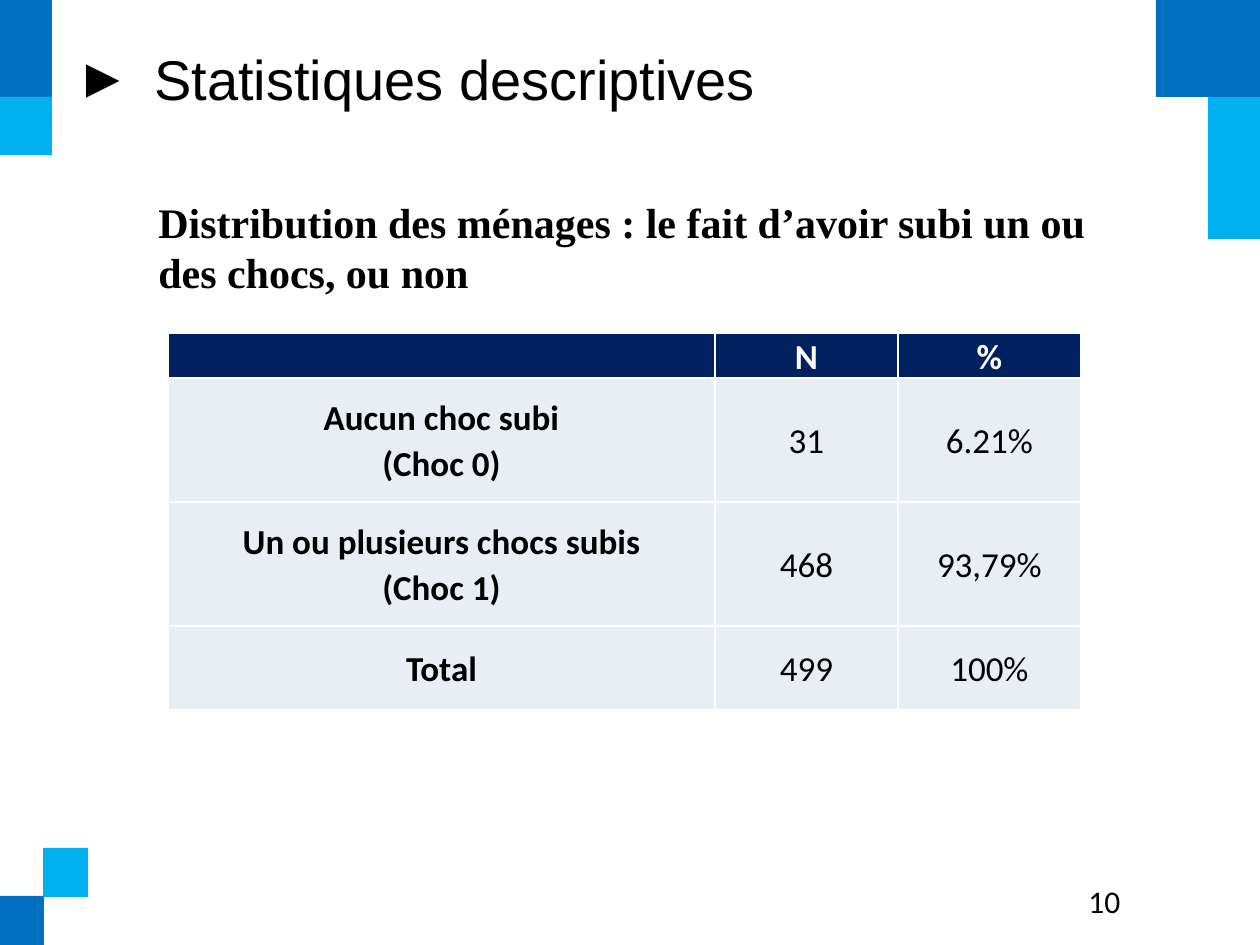
from dataclasses import dataclass

from lxml.etree import SubElement
from pptx import Presentation
from pptx.dml.color import RGBColor
from pptx.enum.shapes import MSO_SHAPE
from pptx.enum.text import MSO_ANCHOR, PP_ALIGN
from pptx.oxml.ns import qn
from pptx.util import Emu, Pt

PIXELS_PER_INCH = 126
SLIDE_SIZE = (1260, 945)


def px(length):
    """Turn pixels into EMU."""
    return Emu(round(length * 914400 / PIXELS_PER_INCH))


@dataclass(frozen=True)
class Theme:
    dark_blue: str = "0070C0"
    light_blue: str = "00B0F0"
    header_fill: str = "002060"
    body_fill: str = "E9EDF4"
    white: str = "FFFFFF"
    black: str = "000000"
    title_font: str = "Arial"
    subtitle_font: str = "Times New Roman"
    table_font: str = "Calibri"
    title_size: int = 32
    subtitle_size: int = 24
    table_size: int = 20
    number_size: int = 18
    table_spacing: float = 1.07


class SlideBuilder:
    def __init__(self, slide, theme):
        self.slide = slide
        self.theme = theme

    def block(self, box, color):
        shape = self.slide.shapes.add_shape(MSO_SHAPE.RECTANGLE, *map(px, box))
        shape.shadow.inherit = False
        shape.fill.solid()
        shape.fill.fore_color.rgb = RGBColor.from_string(color)
        shape.line.fill.background()

    def run(self, paragraph, text, font, size, bold=False, color=None):
        run = paragraph.add_run()
        run.text = text
        run.font.name = font
        run.font.size = Pt(size)
        run.font.bold = bold
        run.font.color.rgb = RGBColor.from_string(color or self.theme.black)

    def text(self, box, text, font, size, bold=False, anchor=MSO_ANCHOR.TOP):
        frame = self.slide.shapes.add_textbox(*map(px, box)).text_frame
        frame.word_wrap = True
        frame.vertical_anchor = anchor
        paragraph = frame.paragraphs[0]
        self.run(paragraph, text, font, size, bold)
        return paragraph

    def bullet(self, paragraph, symbol, indent, hanging):
        properties = paragraph._p.get_or_add_pPr()
        properties.set("marL", str(px(indent)))
        properties.set("indent", str(-px(hanging)))
        SubElement(properties, qn("a:buFont"), typeface=self.theme.title_font)
        SubElement(properties, qn("a:buChar"), char=symbol)

    def table(self, position, widths, heights, rows):
        """Each cell is a list of lines; the first row and column are bold."""
        size = (sum(widths), sum(heights))
        table = self.slide.shapes.add_table(
            len(rows), len(widths), *map(px, position + size)).table
        for column, width in zip(table.columns, widths):
            column.width = px(width)
        for row, height in zip(table.rows, heights):
            row.height = px(height)
        for row_index, row in enumerate(rows):
            for column_index, lines in enumerate(row):
                self.cell(table.cell(row_index, column_index), lines,
                          header=row_index == 0, label=column_index == 0)

    def cell(self, cell, lines, header, label):
        theme = self.theme
        cell.margin_left = cell.margin_right = px(9)
        cell.margin_top = cell.margin_bottom = 0
        cell.vertical_anchor = MSO_ANCHOR.MIDDLE
        self.cell_borders(cell)
        cell.fill.solid()
        cell.fill.fore_color.rgb = RGBColor.from_string(
            theme.header_fill if header else theme.body_fill)
        frame = cell.text_frame
        for index, line in enumerate(lines):
            paragraph = frame.add_paragraph() if index else frame.paragraphs[0]
            paragraph.alignment = PP_ALIGN.CENTER
            paragraph.line_spacing = theme.table_spacing
            self.run(paragraph, line, theme.table_font, theme.table_size,
                     header or label, theme.white if header else theme.black)

    def cell_borders(self, cell):
        properties = cell._tc.get_or_add_tcPr()
        for side in ("lnL", "lnR", "lnT", "lnB"):
            border = SubElement(properties, qn(f"a:{side}"), w=str(Pt(1)))
            fill = SubElement(border, qn("a:solidFill"))
            SubElement(fill, qn("a:srgbClr"), val=self.theme.white)


def main():
    theme = Theme()
    presentation = Presentation()
    presentation.slide_width, presentation.slide_height = map(px, SLIDE_SIZE)
    slide = presentation.slides.add_slide(presentation.slide_layouts[6])
    builder = SlideBuilder(slide, theme)

    corner_blocks = [
        ((1208, 0, 52, 239), theme.light_blue),
        ((1156, 0, 104, 97), theme.dark_blue),
        ((0, 0, 52, 97), theme.dark_blue),
        ((0, 97, 52, 58), theme.light_blue),
        ((0, 896, 44, 49), theme.dark_blue),
        ((43, 848, 45, 49), theme.light_blue),
    ]
    for box, color in corner_blocks:
        builder.block(box, color)

    builder.text((146, 189, 1007, 115),
                 "Distribution des ménages : le fait d’avoir subi un ou des chocs, ou non",
                 theme.subtitle_font, theme.subtitle_size, bold=True,
                 anchor=MSO_ANCHOR.MIDDLE)
    title = builder.text((63, 38, 1134, 107), "Statistiques descriptives",
                         theme.title_font, theme.title_size)
    builder.bullet(title, "►", indent=79, hanging=79)

    builder.table(
        (168, 333), widths=(547, 183, 183), heights=(38, 124, 124, 84),
        rows=[
            ([], ["N"], ["%"]),
            (["Aucun choc subi", "(Choc 0)"], ["31"], ["6.21%"]),
            (["Un ou plusieurs chocs subis", "(Choc 1)"], ["468"], ["93,79%"]),
            (["Total"], ["499"], ["100%"]),
        ])
    builder.text((1076, 876, 121, 50), "10", theme.table_font, theme.number_size)

    presentation.save("out.pptx")


if __name__ == "__main__":
    main()
